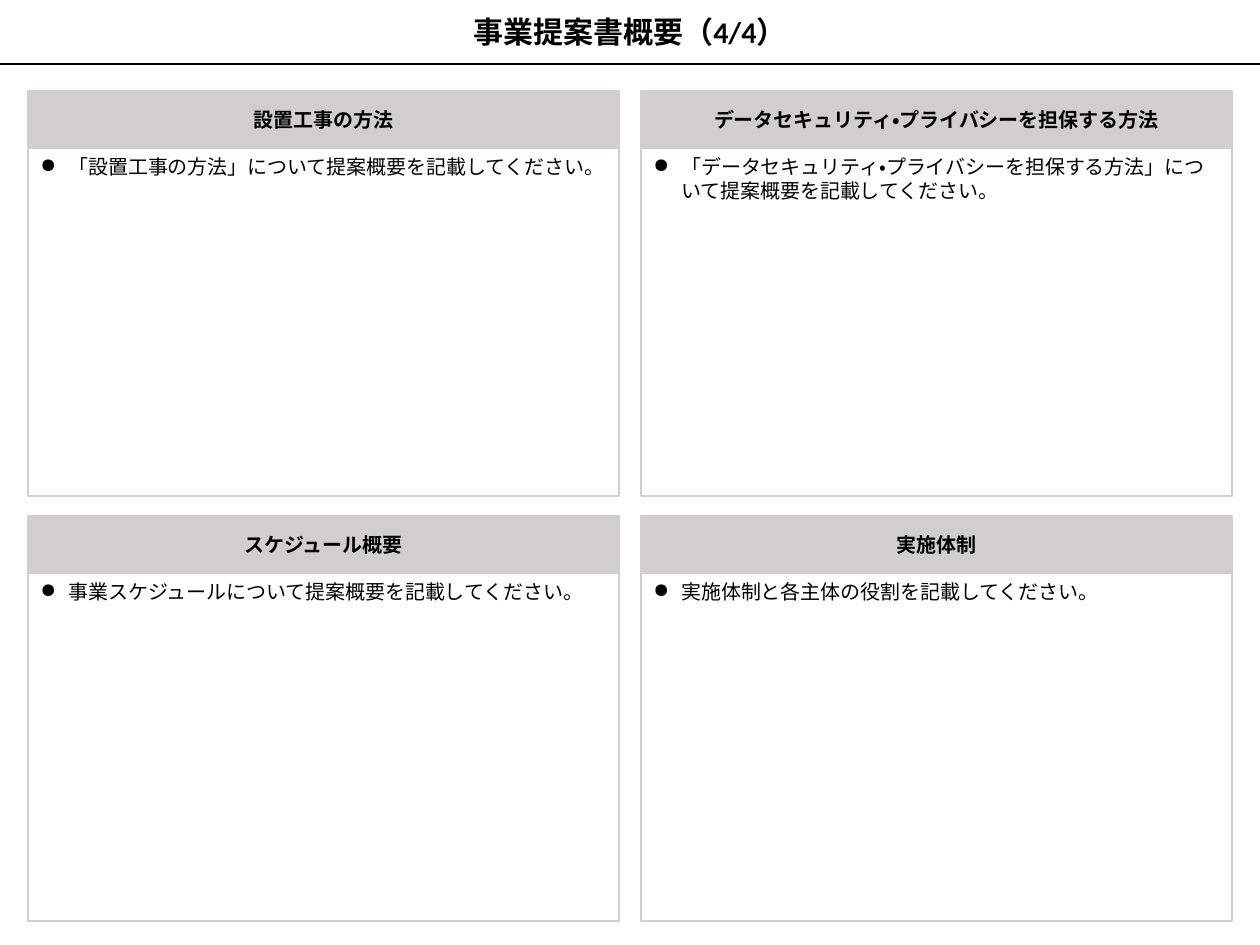
from lxml import etree
from pptx import Presentation
from pptx.dml.color import RGBColor
from pptx.enum import lang, shapes, text
from pptx.oxml import ns
from pptx.util import Inches, Pt

BLACK = RGBColor(0x00, 0x00, 0x00)
WHITE = RGBColor(0xFF, 0xFF, 0xFF)
GRAY = RGBColor(0xD0, 0xCE, 0xCE)

PAGE_WIDTH = Inches(14)
TITLE_HEIGHT = Inches(0.71)
PANEL_LEFT, PANEL_TOP = Inches(0.31), Inches(1.01)
PANEL_WIDTH, PANEL_HEIGHT = Inches(6.57), Inches(4.5)
COLUMN_STEP, ROW_STEP = Inches(6.81), Inches(4.72)
HEADING_HEIGHT, BODY_OFFSET = Inches(0.63), Inches(0.64)

PANELS = [
    [
        ("設置工事の方法", "「設置工事の方法」について提案概要を記載してください。"),
        (
            "データセキュリティ・プライバシーを担保する方法",
            "「データセキュリティ・プライバシーを担保する方法」について提案概要を記載してください。",
        ),
    ],
    [
        ("スケジュール概要", "事業スケジュールについて提案概要を記載してください。"),
        ("実施体制", "実施体制と各主体の役割を記載してください。"),
    ],
]


def add_box(page, left, top, width, height, fill, outline, weight):
    box = page.shapes.add_shape(shapes.MSO_SHAPE.RECTANGLE, left, top, width, height)
    box.shadow.inherit = False
    box.fill.solid()
    box.fill.fore_color.rgb = fill
    box.line.color.rgb = outline
    box.line.width = Pt(weight)
    return box


def write(box, words, size, bold, align, anchor):
    frame = box.text_frame
    frame.text = words
    frame.vertical_anchor = anchor
    para = frame.paragraphs[0]
    para.alignment = align
    font = para.runs[0].font
    font.name = "Calibri"
    font.size = Pt(size)
    font.bold = bold
    font.color.rgb = BLACK
    font.language_id = lang.MSO_LANGUAGE_ID.JAPANESE
    return para


def set_margins(box):
    frame = box.text_frame
    frame.margin_left = frame.margin_right = Inches(0.14)
    frame.margin_top = frame.margin_bottom = Inches(0.07)


def add_bullet(para):
    properties = para._p.get_or_add_pPr()
    properties.set("marL", str(Inches(0.31)))
    properties.set("indent", str(-Inches(0.31)))
    etree.SubElement(properties, ns.qn("a:buChar")).set("char", "●")


def add_title(page, left, top, width, height):
    box = add_box(page, left, top, width, height, WHITE, WHITE, 1)
    write(box, "事業提案書概要（4/4）", 24, True,
          text.PP_ALIGN.CENTER, text.MSO_ANCHOR.MIDDLE)
    bottom = top + height
    rule = page.shapes.add_connector(
        shapes.MSO_CONNECTOR.STRAIGHT, left, bottom, left + width, bottom)
    rule.line.color.rgb = BLACK
    rule.line.width = Pt(1.5)
    etree.SubElement(rule._element.spPr, ns.qn("a:effectLst"))


def add_panel(page, left, top, width, height, heading, guidance):
    header = add_box(page, left, top, width, HEADING_HEIGHT, GRAY, GRAY, 1.5)
    set_margins(header)
    header.text_frame.word_wrap = False
    write(header, heading, 16, True, text.PP_ALIGN.CENTER, text.MSO_ANCHOR.MIDDLE)

    body = add_box(page, left, top + BODY_OFFSET, width, height - BODY_OFFSET,
                   WHITE, GRAY, 1.5)
    set_margins(body)
    body.text_frame.word_wrap = True
    add_bullet(write(body, guidance, 16, False,
                     text.PP_ALIGN.LEFT, text.MSO_ANCHOR.TOP))


def main():
    deck = Presentation()
    deck.slide_width = PAGE_WIDTH
    deck.slide_height = Inches(10.5)
    page = deck.slides.add_slide(deck.slide_layouts[6])
    add_title(page, 0, 0, PAGE_WIDTH, TITLE_HEIGHT)
    for row, panels in enumerate(PANELS):
        for column, (heading, guidance) in enumerate(panels):
            add_panel(page, PANEL_LEFT + column * COLUMN_STEP, PANEL_TOP + row * ROW_STEP,
                      PANEL_WIDTH, PANEL_HEIGHT, heading, guidance)
    deck.save("out.pptx")


if __name__ == "__main__":
    main()
